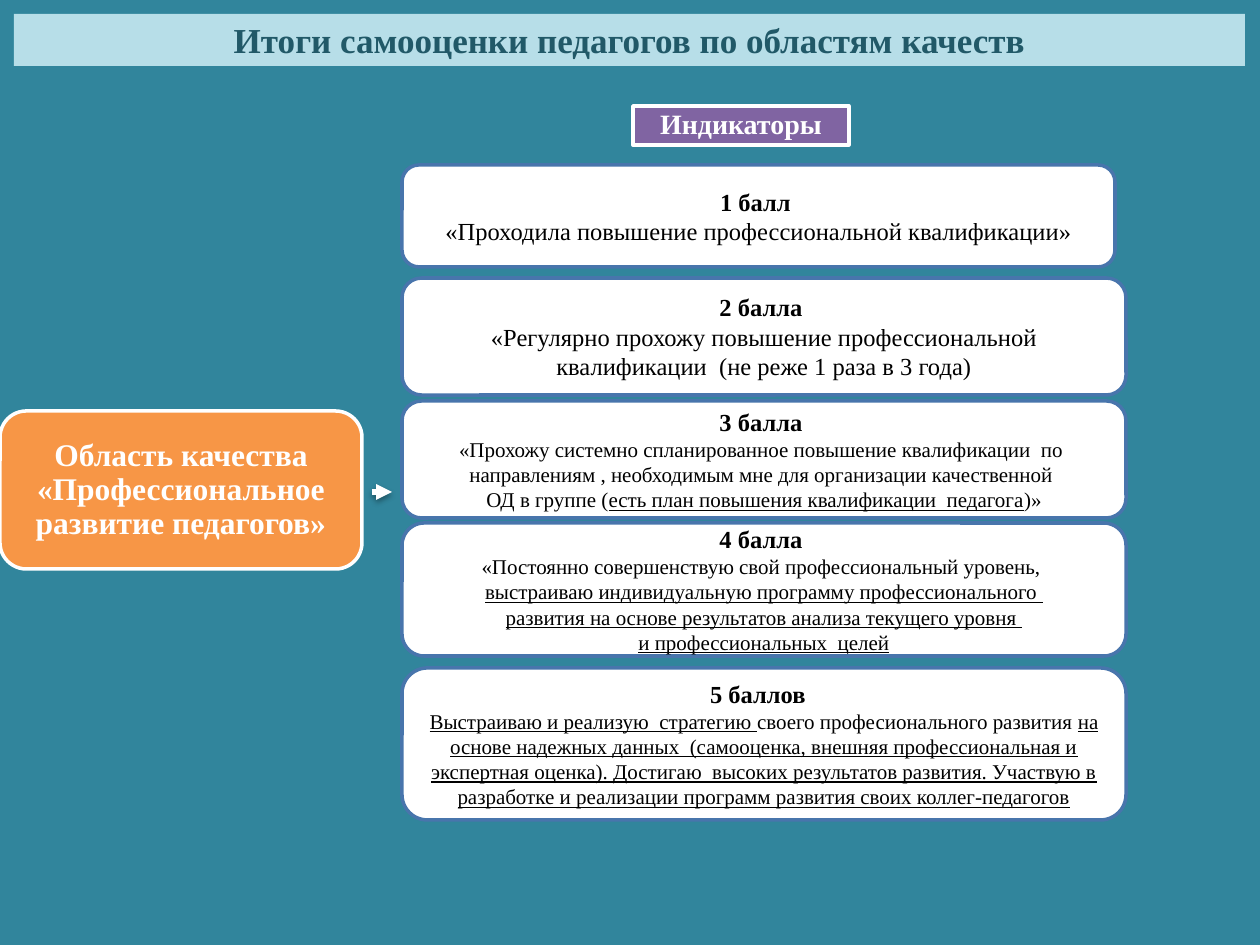
"""Build the slide on teachers' self-assessment of professional development."""
from lxml.etree import SubElement
from pptx import Presentation
from pptx.dml.color import RGBColor
from pptx.enum.shapes import MSO_CONNECTOR, MSO_SHAPE
from pptx.enum.text import MSO_ANCHOR, MSO_AUTO_SIZE, PP_ALIGN
from pptx.oxml import parse_xml
from pptx.oxml.ns import nsdecls, qn
from pptx.util import Pt

PX = 914400 // 126
FONT = "Times New Roman"
COLORS = {
    "background": "31859C", "title_fill": "B7DEE8", "title": "215968",
    "area": "F79646", "label": "8064A2", "card_line": "4875AC",
    "white": "FFFFFF", "black": "000000",
}
TITLE = "Итоги самооценки педагогов по областям качеств"
AREA = "Область качества «Профессиональное развитие педагогов»"
LABEL = "Индикаторы"
UNDERLINE = "_"
CARD_LEFT = 402
CARDS = [
    {"top": 165, "width": 713, "height": 102, "size": 14, "head": "1 балл ",
     "body": ["«Проходила повышение профессиональной квалификации»"]},
    {"top": 278, "width": 724, "height": 117, "size": 14, "head": "2 балла ",
     "body": ["«Регулярно прохожу повышение профессиональной квалификации  (не реже 1 раза в 3 года)"]},
    {"top": 401, "width": 724, "height": 117, "size": 12, "head": "3 балла ",
     "body": ["«Прохожу системно спланированное повышение квалификации  по ",
              "направлениям , необходимым мне для организации качественной ",
              "ОД в группе (_есть план повышения квалификации  педагога_)»"]},
    {"top": 523, "width": 724, "height": 133, "size": 12, "head": "4 балла ",
     "body": ["«Постоянно совершенствую свой профессиональный уровень, ",
              "_выстраиваю индивидуальную программу профессионального _",
              "_развития на основе результатов анализа текущего уровня _",
              "_и профессиональных  целей_"]},
    {"top": 668, "width": 724, "height": 152, "size": 12, "head": "5 баллов  ",
     "body": ["_Выстраиваю и реализую  стратегию _своего професионального развития "
              "_на основе надежных данных  (самооценка, внешняя профессиональная и "
              "экспертная оценка). Достигаю  высоких результатов развития. Участвую в "
              "разработке и реализации программ развития своих коллег-педагогов_"]},
]


def rgb(name):
    return RGBColor.from_string(COLORS[name])


def add_runs(p, text, size, color, bold=False):
    p.alignment = PP_ALIGN.CENTER
    for i, piece in enumerate(text.split(UNDERLINE)):
        if piece:
            r = p.add_run()
            r.text = piece
            r.font.name, r.font.size, r.font.bold = FONT, Pt(size), bold
            r.font.color.rgb = rgb(color)
            if i % 2:
                r.font.underline = True


def add_box(s, kind, box, fill, line, inset):
    sp = s.shapes.add_shape(kind, *(v * PX for v in box))
    sp.shadow.inherit = False
    sp.fill.solid()
    sp.fill.fore_color.rgb = rgb(fill)
    sp.line.color.rgb = rgb(line)
    sp.line.width = Pt(2)
    tf = sp.text_frame
    tf.word_wrap = True
    tf.vertical_anchor = MSO_ANCHOR.MIDDLE
    tf.margin_left = tf.margin_right = tf.margin_top = tf.margin_bottom = inset * PX
    return tf


def add_title(s):
    sp = s.shapes.title
    sp.left, sp.top, sp.width, sp.height = (v * PX for v in (14, 14, 1231, 52))
    sp.fill.solid()
    sp.fill.fore_color.rgb = rgb("title_fill")
    tf = sp.text_frame
    tf.auto_size = MSO_AUTO_SIZE.NONE
    tf.vertical_anchor = MSO_ANCHOR.MIDDLE
    add_runs(tf.paragraphs[0], TITLE, 20, "title", True)


def add_heading(s, kind, box, fill, inset, text, size):
    p = add_box(s, kind, box, fill, "white", inset).paragraphs[0]
    p.line_spacing = 0.9
    add_runs(p, text, size, "white", True)


def add_card(s, card):
    box = (CARD_LEFT, card["top"], card["width"], card["height"])
    tf = add_box(s, MSO_SHAPE.ROUNDED_RECTANGLE, box, "white", "card_line", 6)
    add_runs(tf.paragraphs[0], card["head"], 14, "black", True)
    for text in card["body"]:
        add_runs(tf.add_paragraph(), text, card["size"], "black")


def add_arrow(s, x1, x2, y):
    c = s.shapes.add_connector(MSO_CONNECTOR.STRAIGHT, x1 * PX, y * PX, x2 * PX, y * PX)
    c.line.color.rgb = rgb("white")
    c.line.width = Pt(3)
    SubElement(c.line._get_or_add_ln(), qn("a:tailEnd"), type="triangle")
    c._element.spPr.append(parse_xml(
        f'<a:effectLst {nsdecls("a")}><a:outerShdw blurRad="{Pt(3.1)}" dist="{Pt(1.8)}" '
        f'dir="5400000" rotWithShape="0"><a:srgbClr val="{COLORS["black"]}">'
        '<a:alpha val="35000"/></a:srgbClr></a:outerShdw></a:effectLst>'))


def main():
    prs = Presentation()
    prs.slide_width, prs.slide_height = 1260 * PX, 945 * PX
    s = prs.slides.add_slide(prs.slide_layouts[5])
    s.background.fill.solid()
    s.background.fill.fore_color.rgb = rgb("background")
    add_title(s)
    add_heading(s, MSO_SHAPE.ROUNDED_RECTANGLE, (0, 411, 362, 158), "area", 1, AREA, 18)
    for card in CARDS:
        add_card(s, card)
    add_arrow(s, 372, 392, 492)
    add_heading(s, MSO_SHAPE.RECTANGLE, (633, 106, 216, 39), "label", 1, LABEL, 16)
    prs.save("out.pptx")


if __name__ == "__main__":
    main()
